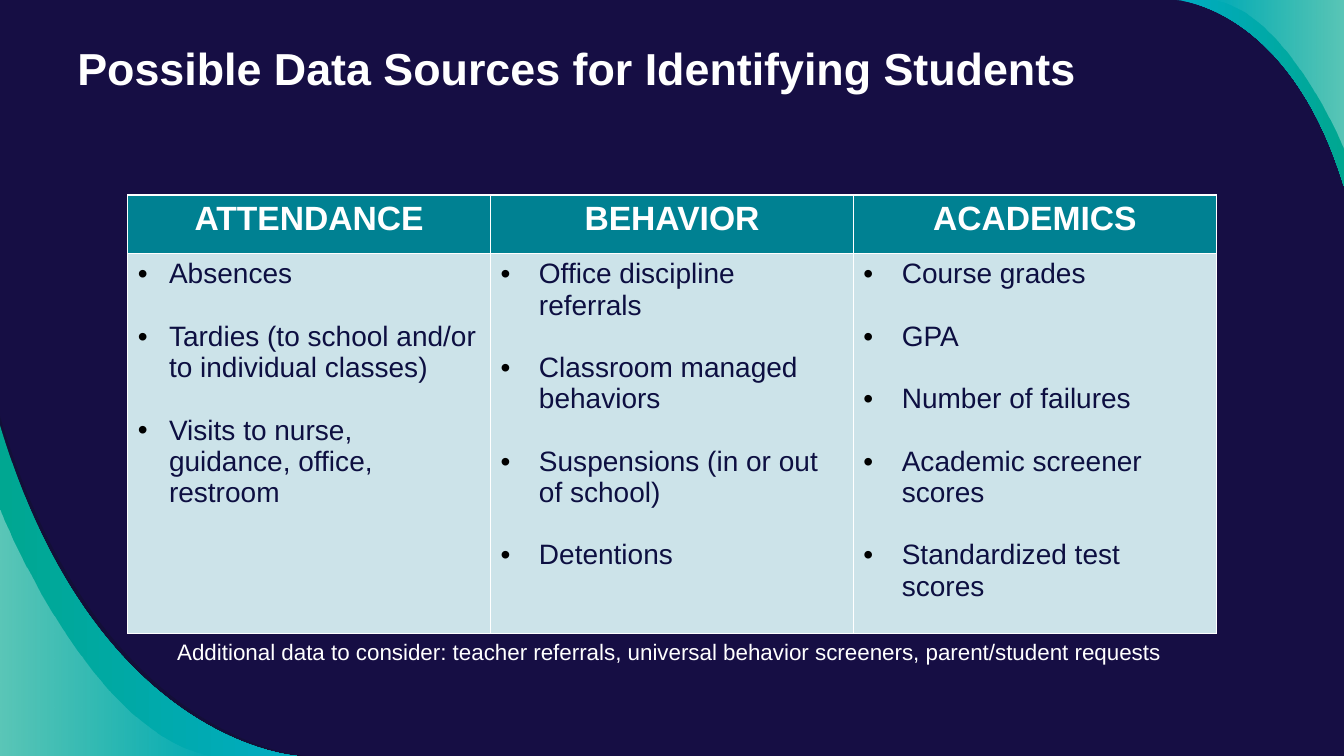
from dataclasses import dataclass

from lxml.etree import SubElement
from pptx import Presentation
from pptx.dml.color import RGBColor
from pptx.enum.text import MSO_ANCHOR as Anchor, MSO_AUTO_SIZE as AutoSize, PP_ALIGN as Align
from pptx.oxml.ns import qn
from pptx.util import Emu, Inches, Pt

NAVY = RGBColor(0x16, 0x0E, 0x44)
SHADE = RGBColor(0x12, 0x10, 0x2F)
CYAN = RGBColor(0x00, 0xAC, 0xC2)
GREEN = RGBColor(0x00, 0xA7, 0x91)
TEAL = RGBColor(0x00, 0x81, 0x92)
PALE = RGBColor(0xCC, 0xE3, 0xE9)
INK = RGBColor(0x0D, 0x0F, 0x41)
WHITE = RGBColor(0xFF, 0xFF, 0xFF)
BLACK = RGBColor(0x00, 0x00, 0x00)

FONT = "Arial"
ITEM_GAP = Pt(22.3)

Point = tuple[float, float]


@dataclass(frozen=True)
class Swoosh:
    """Corner area under a Bezier curve; points in percent of the slide, stops as (colour, opacity)."""
    curve: tuple[Point, Point, Point, Point]
    corner: Point
    stops: tuple[tuple[RGBColor, int], ...]


@dataclass(frozen=True)
class DataSource:
    heading: str
    items: tuple[str, ...]
    indent: float


BAND = ((CYAN, 100), (GREEN, 100))
SHEEN = ((WHITE, 0), (WHITE, 36))
BOTTOM_LEFT, TOP_RIGHT = (0, 100), (100, 0)

SWOOSHES = (
    Swoosh(((0, 55.07), (7.35, 98.53), (22.73, 100), (22.73, 100)), BOTTOM_LEFT, ((SHADE, 54),)),
    Swoosh(((0, 56.27), (7.13, 98.53), (22.13, 100), (22.13, 100)), BOTTOM_LEFT, BAND[::-1]),
    Swoosh(((0, 67.47), (0, 67.47), (6.83, 98), (16.2, 100)), BOTTOM_LEFT, SHEEN[::-1]),
    Swoosh(((87.53, 0), (87.53, 0), (95.93, 0.8), (100, 24.67)), TOP_RIGHT, BAND),
    Swoosh(((90.08, 0), (95.78, 1.2), (100, 19.87), (100, 19.87)), TOP_RIGHT, SHEEN),
)

DATA_SOURCES = (
    DataSource("ATTENDANCE", (
        "Absences",
        "Tardies (to school and/or to individual classes)",
        "Visits to nurse, guidance, office, restroom",
    ), 0.31),
    DataSource("BEHAVIOR", (
        "Office discipline referrals",
        "Classroom managed behaviors",
        "Suspensions (in or out of school)",
        "Detentions",
    ), 0.38),
    DataSource("ACADEMICS", (
        "Course grades",
        "GPA",
        "Number of failures",
        "Academic screener scores",
        "Standardized test scores",
    ), 0.38),
)

presentation = Presentation()
presentation.slide_width, presentation.slide_height = Inches(13.33), Inches(7.5)


def across(percent: float) -> Emu:
    return Emu(round(presentation.slide_width * percent / 100))


def down(percent: float) -> Emu:
    return Emu(round(presentation.slide_height * percent / 100))


def set_all(target, values: dict) -> None:
    for name, value in values.items():
        setattr(target, name, value)


def write(paragraph, text: str, size: float, color: RGBColor, bold: bool = False) -> None:
    paragraph.text = text
    set_all(paragraph.font, {"name": FONT, "size": Pt(size), "bold": bold})
    paragraph.font.color.rgb = color


def bend_first_side(shape) -> None:
    """Join the first three line segments of a freeform into one Bezier curve."""
    outline = shape._element.spPr.find(".//" + qn("a:path"))
    curve = SubElement(outline, qn("a:cubicBezTo"))
    for segment in outline.findall(qn("a:lnTo"))[:3]:
        curve.append(segment[0])
        outline.remove(segment)
    outline.insert(1, curve)


def draw_swoosh(slide, swoosh: Swoosh) -> None:
    points = [(across(x), down(y)) for x, y in (*swoosh.curve, swoosh.corner)]
    builder = slide.shapes.build_freeform(*points[0])
    builder.add_line_segments(points[1:], close=True)
    shape = builder.convert_to_shape()
    bend_first_side(shape)
    shape.shadow.inherit = False
    shape.line.fill.background()
    if len(swoosh.stops) == 1:
        shape.fill.solid()
        shape.fill.fore_color.rgb = swoosh.stops[0][0]
    else:
        shape.fill.gradient()
        shape.fill.gradient_angle = 0
        for stop, (color, _) in zip(shape.fill.gradient_stops, swoosh.stops):
            stop.color.rgb = color
    colors = shape._element.spPr.findall(".//" + qn("a:srgbClr"))
    for element, (_, opacity) in zip(colors, swoosh.stops):
        if opacity < 100:
            SubElement(element, qn("a:alpha"), val=str(opacity * 1000))


def format_cell(cell, color: RGBColor) -> None:
    cell.fill.solid()
    cell.fill.fore_color.rgb = color
    properties = cell._tc.get_or_add_tcPr()
    for position, side in enumerate(("lnL", "lnR", "lnT", "lnB")):
        line = SubElement(properties, qn(f"a:{side}"), w=str(Pt(1)))
        fill = SubElement(line, qn("a:solidFill"))
        SubElement(fill, qn("a:srgbClr"), val=str(WHITE))
        properties.insert(position, line)


def add_bullet(paragraph, indent: float) -> None:
    properties = paragraph._p.get_or_add_pPr()
    for name, value in {"marL": Inches(indent), "indent": -Inches(indent)}.items():
        properties.set(name, str(value))
    bullet_color = SubElement(properties, qn("a:buClr"))
    SubElement(bullet_color, qn("a:srgbClr"), val=str(BLACK))
    SubElement(properties, qn("a:buFont"), typeface=FONT)
    SubElement(properties, qn("a:buChar"), char="•")


def draw_table(slide, sources: tuple[DataSource, ...]) -> None:
    row_heights = (7.73, 50.27)
    table = slide.shapes.add_table(
        len(row_heights), len(sources),
        across(9.5), down(25.8), across(81), down(sum(row_heights)),
    ).table
    set_all(table, {"first_row": False, "horz_banding": False})
    for row, height in zip(table.rows, row_heights):
        row.height = down(height)
    for column, source in enumerate(sources):
        table.columns[column].width = across(81 / len(sources))
        heading, body = table.cell(0, column), table.cell(1, column)
        format_cell(heading, TEAL)
        format_cell(body, PALE)
        paragraph = heading.text_frame.paragraphs[0]
        paragraph.alignment = Align.CENTER
        write(paragraph, source.heading, 24, WHITE, bold=True)
        for index, item in enumerate(source.items):
            frame = body.text_frame
            paragraph = frame.add_paragraph() if index else frame.paragraphs[0]
            add_bullet(paragraph, source.indent)
            if index:
                paragraph.space_before = ITEM_GAP
            write(paragraph, item, 20, INK)


def main() -> None:
    slide = presentation.slides.add_slide(presentation.slide_layouts[5])
    slide.background.fill.solid()
    slide.background.fill.fore_color.rgb = NAVY

    # Corner decoration
    for swoosh in SWOOSHES:
        draw_swoosh(slide, swoosh)

    # Data sources
    draw_table(slide, DATA_SOURCES)

    # Title, in front of the decoration
    title = slide.shapes.title
    slide.shapes._spTree.append(title._element)
    set_all(title, {"left": across(5), "top": down(4), "width": across(90), "height": down(16.67)})
    margins = {f"margin_{side}": Inches(0.1) for side in ("left", "top", "right", "bottom")}
    set_all(title.text_frame, {
        "auto_size": AutoSize.NONE, "vertical_anchor": Anchor.TOP, "word_wrap": True, **margins,
    })
    paragraph = title.text_frame.paragraphs[0]
    paragraph.alignment = Align.LEFT
    write(paragraph, "Possible Data Sources for Identifying Students", 32, WHITE, bold=True)

    # Note under the table
    note = slide.shapes.add_textbox(across(12.45), down(83.8), across(76.5), down(4.93))
    set_all(note.text_frame, {"word_wrap": True, "auto_size": AutoSize.SHAPE_TO_FIT_TEXT})
    write(
        note.text_frame.paragraphs[0],
        "Additional data to consider: teacher referrals, universal behavior screeners, "
        "parent/student requests",
        16, WHITE,
    )

    presentation.save("out.pptx")


if __name__ == "__main__":
    main()
